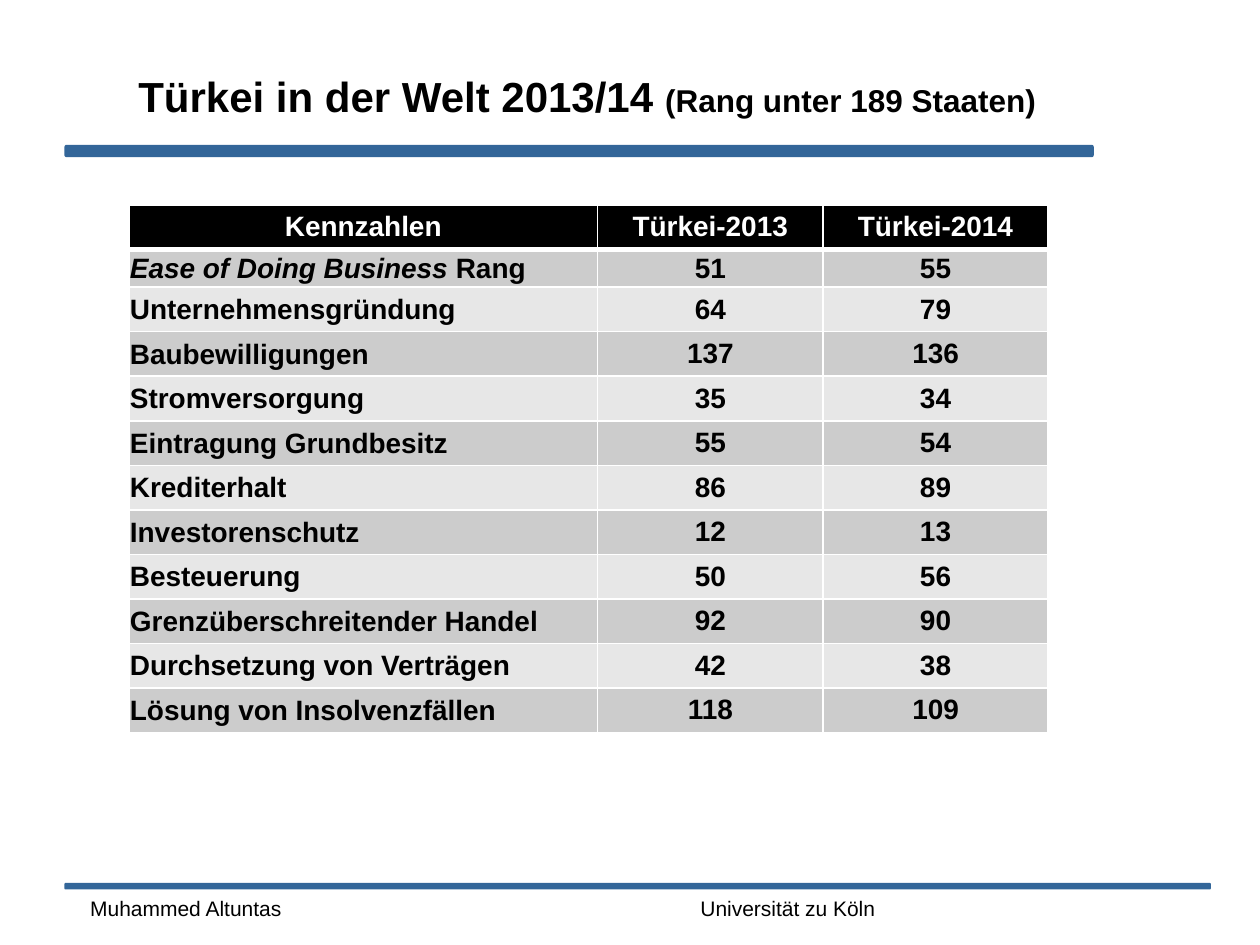
from lxml.etree import SubElement
from pptx import Presentation
from pptx.dml.color import RGBColor
from pptx.enum.shapes import MSO_SHAPE
from pptx.enum.text import MSO_ANCHOR, PP_ALIGN
from pptx.oxml.ns import qn
from pptx.util import Cm, Pt

COLOURS = {
    "bar": "336699",
    "text": "000000",
    "header": "000000",
    "header_text": "FFFFFF",
    "border": "FFFFFF",
    "odd_row": "CCCCCC",
    "even_row": "E7E7E7",
}
BODY = {"name": "Arial", "size": Pt(16), "bold": True}
TITLE = {"name": "Arial", "size": Pt(24), "bold": True}
SUBTITLE = {**TITLE, "size": Pt(18)}
FOOTER = {"name": "Arial", "size": Pt(12), "bold": False}

HEADINGS = ("Kennzahlen", "Türkei-2013", "Türkei-2014")
RANKS = (
    ("Ease of Doing Business Rang", 51, 55),
    ("Unternehmensgründung", 64, 79),
    ("Baubewilligungen", 137, 136),
    ("Stromversorgung", 35, 34),
    ("Eintragung Grundbesitz", 55, 54),
    ("Krediterhalt", 86, 89),
    ("Investorenschutz", 12, 13),
    ("Besteuerung", 50, 56),
    ("Grenzüberschreitender Handel", 92, 90),
    ("Durchsetzung von Verträgen", 42, 38),
    ("Lösung von Insolvenzfällen", 118, 109),
)
ITALIC_TERM = "Ease of Doing Business "
COLUMN_WIDTHS = (9.45, 4.54, 4.54)
ROW_HEIGHT = 0.88
FIRST_RANK_HEIGHT = 0.76


def colour(name):
    """Return the named colour."""
    return RGBColor.from_string(COLOURS[name])


def add_span(para, text, style, colour_name="text"):
    """Append a run of text in the given style."""
    span = para.add_run()
    span.text = text
    for attribute, value in style.items():
        setattr(span.font, attribute, value)
    span.font.color.rgb = colour(colour_name)


def add_bar(page, top, width, height):
    """Draw a horizontal rule with rounded ends."""
    bar = page.shapes.add_shape(
        MSO_SHAPE.ROUNDED_RECTANGLE, Cm(1.3), Cm(top), Cm(width), Cm(height)
    )
    bar.shadow.inherit = False
    bar.fill.solid()
    bar.fill.fore_color.rgb = colour("bar")
    bar.line.fill.background()


def add_text(page, left, top, width, height, spans):
    """Add a one-line text box from pairs of text and style."""
    box = page.shapes.add_textbox(Cm(left), Cm(top), Cm(width), Cm(height))
    box.text_frame.word_wrap = True
    box.text_frame.vertical_anchor = MSO_ANCHOR.MIDDLE
    for text, style in spans:
        add_span(box.text_frame.paragraphs[0], text, style)


def add_borders(cell, bottom_width):
    """Give a cell thin borders and a bottom border of its own width."""
    properties = cell._tc.get_or_add_tcPr()
    for side, width in (("L", 1), ("R", 1), ("T", 1), ("B", bottom_width)):
        line = SubElement(properties, qn(f"a:ln{side}"), w=str(Pt(width)))
        fill = SubElement(line, qn("a:solidFill"))
        SubElement(fill, qn("a:srgbClr"), val=COLOURS["border"])


def format_cell(cell, fill_name, tight, centred, bottom_width=1):
    """Set the borders, fill, margins and alignment of a cell."""
    add_borders(cell, bottom_width)
    cell.fill.solid()
    cell.fill.fore_color.rgb = colour(fill_name)
    layout = {"vertical_anchor": MSO_ANCHOR.MIDDLE}
    if tight:
        layout.update(margin_left=Cm(0.02), margin_right=Cm(0.02),
                      margin_top=Cm(0.02), margin_bottom=0)
    else:
        layout.update(margin_top=Cm(0.11), margin_bottom=Cm(0.11))
    for attribute, value in layout.items():
        setattr(cell, attribute, value)
    para = cell.text_frame.paragraphs[0]
    para.alignment = PP_ALIGN.CENTER if centred else PP_ALIGN.LEFT
    return para


def add_label(para, label):
    """Write a row label with its English term in italics."""
    if label.startswith(ITALIC_TERM):
        add_span(para, ITALIC_TERM, {**BODY, "italic": True})
        label = label.removeprefix(ITALIC_TERM)
    add_span(para, label, BODY)


def add_rank_table(page):
    """Build the table of ranks for both years."""
    row_count = len(RANKS) + 1
    table = page.shapes.add_table(
        row_count, len(HEADINGS), Cm(2.6), Cm(4.13),
        Cm(sum(COLUMN_WIDTHS)), Cm(ROW_HEIGHT * row_count),
    ).table
    for column, width in zip(table.columns, COLUMN_WIDTHS):
        column.width = Cm(width)
    for index, row in enumerate(table.rows):
        row.height = Cm(FIRST_RANK_HEIGHT if index == 1 else ROW_HEIGHT)
    for column, heading in enumerate(HEADINGS):
        para = format_cell(table.cell(0, column), "header", False, True, 3)
        add_span(para, heading, BODY, "header_text")
    for row, (label, *ranks) in enumerate(RANKS, start=1):
        fill_name = "odd_row" if row % 2 else "even_row"
        add_label(format_cell(table.cell(row, 0), fill_name, True, False), label)
        for column, rank in enumerate(ranks, start=1):
            para = format_cell(table.cell(row, column), fill_name, row == 1, True)
            add_span(para, str(rank), BODY)


def main():
    """Build the slide and save the deck."""
    deck = Presentation()
    deck.slide_width, deck.slide_height = Cm(25.4), Cm(19.05)
    page = deck.slides.add_slide(deck.slide_layouts[6])
    add_bar(page, 2.92, 20.75, 0.25)
    add_bar(page, 17.8, 23.11, 0.13)
    add_text(page, 13.87, 17.93, 8.05, 0.74, [("Universität zu Köln", FOOTER)])
    add_text(page, 1.57, 17.93, 5.92, 0.74, [("Muhammed Altuntas", FOOTER)])
    add_text(page, 2.54, 0.33, 22.2, 3.18, [
        ("Türkei in der Welt 2013/14 ", TITLE),
        ("(Rang unter 189 Staaten)", SUBTITLE),
    ])
    add_rank_table(page)
    deck.save("out.pptx")


if __name__ == "__main__":
    main()
